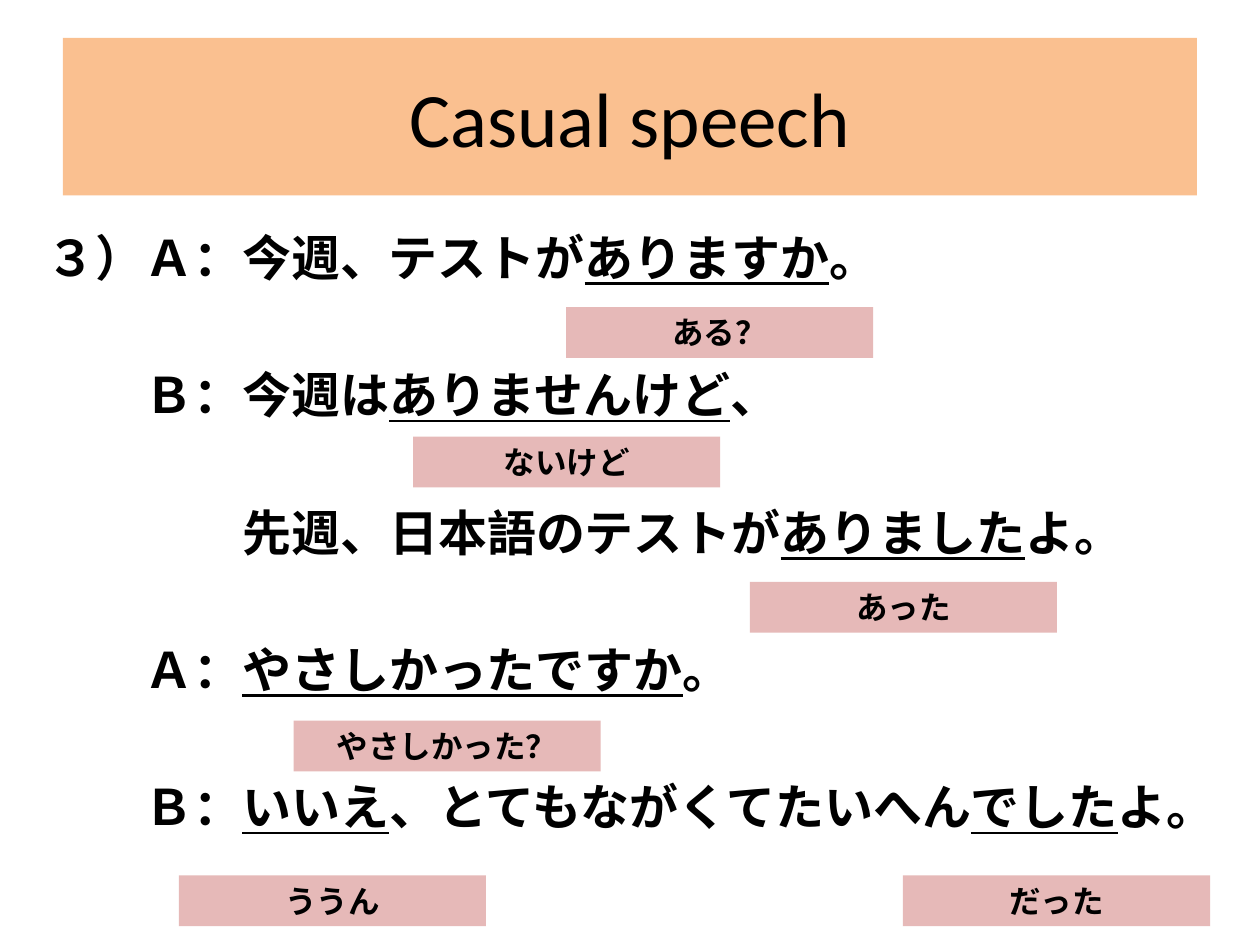
from pptx import Presentation
from pptx.dml.color import RGBColor
from pptx.enum.shapes import MSO_SHAPE
from pptx.enum.text import MSO_ANCHOR, MSO_AUTO_SIZE, PP_ALIGN
from pptx.util import Pt

RECTANGLE = MSO_SHAPE.RECTANGLE
CENTER = PP_ALIGN.CENTER
TOP, MIDDLE = MSO_ANCHOR.TOP, MSO_ANCHOR.MIDDLE
GROW = MSO_AUTO_SIZE.SHAPE_TO_FIT_TEXT

FONT = "Calibri"
BLACK, ORANGE, PINK = "000000", "FAC090", "E6B9B8"
DIALOGUE_SIZE = 28
LINE_HEIGHT = 34
LINE_PITCH = 78.5
LABEL_WIDTH, LABEL_HEIGHT = 175.5, 29

# Each line: indent in full-width characters, then text with underlined parts between bars.
DIALOGUE = [
    (0, "３）Ａ：今週、テストが|ありますか|。"),
    (2, "Ｂ：今週は|ありませんけど|、"),
    (4, "先週、日本語のテストが|ありました|よ。"),
    (2, "Ａ：|やさしかったですか|。"),
    (2, "Ｂ：|いいえ|、とてもながくてたいへん|でした|よ。"),
]

CASUAL_FORMS = [
    ("ある？", 323.5, 175.5),
    ("ないけど", 236, 249.5),
    ("あった", 428.5, 332.5),
    ("やさしかった？", 167.75, 411.75),
    ("ううん", 102.25, 500.25),
    ("だった", 516, 500.25),
]


def color(hex_string):
    return RGBColor.from_string(hex_string)


def style_span(span, size, bold=False, underline=False):
    span.font.name = FONT
    span.font.size = Pt(size)
    span.font.bold = bold
    span.font.underline = underline
    span.font.color.rgb = color(BLACK)


def add_filled_box(page, text, left, top, width, height, fill, size, bold, anchor):
    box = page.shapes.add_shape(RECTANGLE, Pt(left), Pt(top), Pt(width), Pt(height))
    box.shadow.inherit = False
    box.fill.solid()
    box.fill.fore_color.rgb = color(fill)
    box.line.fill.background()
    frame = box.text_frame
    frame.word_wrap = True
    frame.vertical_anchor = anchor
    frame.text = text
    para = frame.paragraphs[0]
    para.alignment = CENTER
    style_span(para.runs[0], size, bold)
    return box


def add_label(page, text, left, top):
    box = add_filled_box(page, text, left, top, LABEL_WIDTH, LABEL_HEIGHT,
                         PINK, 18, True, TOP)
    box.text_frame.auto_size = GROW


def add_dialogue(page, lines, left, top, width, height):
    box = page.shapes.add_textbox(Pt(left), Pt(top), Pt(width), Pt(height))
    frame = box.text_frame
    frame.word_wrap = True
    for number, (indent, text) in enumerate(lines):
        para = frame.add_paragraph() if number else frame.paragraphs[0]
        para.line_spacing = Pt(LINE_HEIGHT)
        para.space_before = Pt(LINE_PITCH - LINE_HEIGHT if number else 0)
        para._p.get_or_add_pPr().set("marL", str(Pt(indent * DIALOGUE_SIZE)))
        for position, part in enumerate(text.split("|")):
            span = para.add_run()
            span.text = part
            style_span(span, DIALOGUE_SIZE, True, position % 2 == 1)


def main():
    deck = Presentation()
    deck.slide_width, deck.slide_height = Pt(720), Pt(540)
    page = deck.slides.add_slide(deck.slide_layouts[6])
    add_filled_box(page, "Casual speech", 36, 21.6, 648, 90, ORANGE, 44, False, MIDDLE)
    add_dialogue(page, DIALOGUE, 19.5, 126, 700.5, 414)
    for text, left, top in CASUAL_FORMS:
        add_label(page, text, left, top)
    deck.save("out.pptx")


if __name__ == "__main__":
    main()
